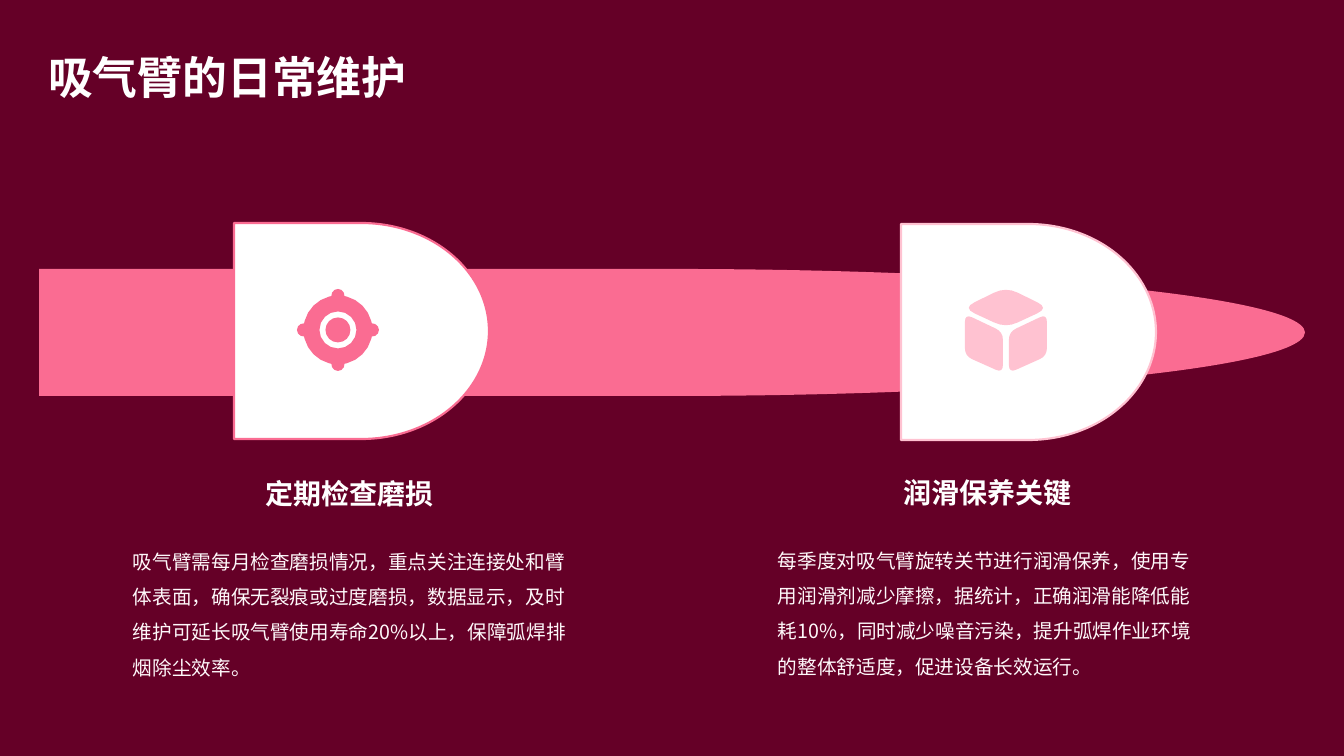
import math
from dataclasses import dataclass

from lxml import etree
from pptx import Presentation
from pptx import util as u
from pptx.dml.color import RGBColor
from pptx.enum import shapes, text
from pptx.oxml.ns import qn

PX = 914400 / 100.8
FONT = "Noto Sans CJK SC"
WINE, PINK, BLUSH = "650027", "FA6C92", "FFC2D1"
WHITE, PALE = "FFFFFF", "FEF8FA"
KNOB_ANGLES = (-45, -30, -15, -11, -9, -5, 0, 5, 9, 11, 15, 30)

Point = tuple[float, float]
Contour = list[Point]
Box = tuple[int, int, int, int]


@dataclass(frozen=True)
class Step:
    badge: Box
    accent: str
    icon: list[Contour]
    heading: str
    heading_box: Box
    body: str
    body_box: Box


def emu(px: float) -> u.Emu:
    return u.Emu(round(px * PX))


def rgb(value: str) -> RGBColor:
    return RGBColor.from_string(value)


def polar(cx: int, cy: int, radius: float, degree: float) -> Point:
    angle = math.radians(degree)
    return cx + radius * math.cos(angle), cy + radius * math.sin(angle)


def circle(cx: int, cy: int, radius: float, turn: int = 1) -> Contour:
    return [polar(cx, cy, radius, turn * i * 22.5) for i in range(16)]


def knobbed_circle(cx: int, cy: int, radius: float, knob: float) -> Contour:
    """Circle outline with four round knobs centred on its rim."""
    points = []
    for quarter in range(0, 360, 90):
        for degree in KNOB_ANGLES:
            off = math.radians(degree)
            inside = knob ** 2 - (radius * math.sin(off)) ** 2
            reach = radius
            if inside > 0:
                reach = max(radius, radius * math.cos(off) + math.sqrt(inside))
            points.append(polar(cx, cy, reach, quarter + degree))
    return points


def rounded(corners: Contour, cut: float) -> Contour:
    """Polygon whose corners are replaced by quadratic curves."""
    points = []
    for i, (x, y) in enumerate(corners):
        ends = []
        for nx, ny in (corners[i - 1], corners[(i + 1) % len(corners)]):
            share = cut / math.hypot(nx - x, ny - y)
            ends.append((x + (nx - x) * share, y + (ny - y) * share))
        (ax, ay), (bx, by) = ends
        for t in (0, 0.25, 0.5, 0.75, 1):
            a, c, b = (1 - t) ** 2, 2 * t * (1 - t), t * t
            points.append((a * ax + c * x + b * bx, a * ay + c * y + b * by))
    return points


def target_icon(cx: int, cy: int) -> list[Contour]:
    return [knobbed_circle(cx, cy, 34.5, 6.5), circle(cx, cy, 18.5, turn=-1),
            circle(cx, cy, 12.5)]


def cube_icon(cx: int, cy: int) -> list[Contour]:
    top = [(cx, cy - 43), (cx + 43, cy - 22), (cx, cy - 2), (cx - 43, cy - 22)]
    sides = [[(cx + s * 41, cy - 16), (cx + s * 3, cy + 2),
              (cx + s * 3, cy + 43), (cx + s * 41, cy + 26)] for s in (-1, 1)]
    return [rounded(top, 13)] + [rounded(side, 8) for side in sides]


def paint(sp, fill: str, line: str | None = None) -> None:
    sp.shadow.inherit = False
    sp.fill.solid()
    sp.fill.fore_color.rgb = rgb(fill)
    if line:
        sp.line.color.rgb = rgb(line)
        sp.line.width = u.Pt(1.54)
    else:
        sp.line.fill.background()


def add_delay(slide, box: Box, fill: str, line: str | None = None) -> None:
    sp = slide.shapes.add_shape(shapes.MSO_SHAPE.FLOWCHART_DELAY, *map(emu, box))
    paint(sp, fill, line)


def add_icon(slide, contours: list[Contour], fill: str) -> None:
    outlines = [[(emu(x), emu(y)) for x, y in contour] for contour in contours]
    builder = slide.shapes.build_freeform(*outlines[0][0])
    for i, outline in enumerate(outlines):
        if i:
            builder.move_to(*outline[0])
        builder.add_line_segments(outline[1:], close=True)
    paint(builder.convert_to_shape(), fill)


def write(sp, words: str, size: int, color: str, bold: bool = False,
          align=text.PP_ALIGN.LEFT, anchor=text.MSO_ANCHOR.MIDDLE,
          spacing: float = 1.0) -> None:
    tf = sp.text_frame
    tf.word_wrap = True
    tf.auto_size = text.MSO_AUTO_SIZE.NONE
    tf.vertical_anchor = anchor
    p = tf.paragraphs[0]
    p.alignment = align
    p.line_spacing = spacing
    p.space_before = u.Pt(0)
    r = p.add_run()
    r.text = words
    r.font.name = FONT
    r.font.size = u.Pt(size)
    r.font.bold = bold
    r.font.color.rgb = rgb(color)
    ea = etree.Element(qn("a:ea"), typeface=FONT)
    r.font._element.find(qn("a:latin")).addnext(ea)


def add_title(slide, words: str, box: Box) -> None:
    sp = slide.shapes.title
    sp.left, sp.top, sp.width, sp.height = map(emu, box)
    write(sp, words, 32, WHITE, bold=True, spacing=1.2)


def add_step_text(slide, step: Step) -> None:
    body = slide.shapes.add_textbox(*map(emu, step.body_box))
    write(body, step.body, 14, PALE, anchor=text.MSO_ANCHOR.TOP, spacing=1.5)
    heading = slide.shapes.add_textbox(*map(emu, step.heading_box))
    write(heading, step.heading, 20, WHITE, bold=True, align=text.PP_ALIGN.CENTER)


STEPS = [
    Step((234, 223, 255, 216), PINK, target_icon(338, 330),
         "定期检查磨损", (200, 471, 299, 45),
         "吸气臂需每月检查磨损情况，重点关注连接处和臂体表面，确保无裂痕或过度磨损，"
         "数据显示，及时维护可延长吸气臂使用寿命20%以上，保障弧焊排烟除尘效率。",
         (123, 533, 453, 191)),
    Step((901, 224, 255, 216), BLUSH, cube_icon(1006, 330),
         "润滑保养关键", (838, 470, 299, 45),
         "每季度对吸气臂旋转关节进行润滑保养，使用专用润滑剂减少摩擦，据统计，"
         "正确润滑能降低能耗10%，同时减少噪音污染，提升弧焊作业环境的整体舒适度，"
         "促进设备长效运行。",
         (768, 532, 439, 191)),
]


def main() -> None:
    prs = Presentation()
    prs.slide_width, prs.slide_height = emu(1344), emu(756)
    slide = prs.slides.add_slide(prs.slide_layouts[5])
    slide.background.fill.solid()
    slide.background.fill.fore_color.rgb = rgb(WINE)
    add_title(slide, "吸气臂的日常维护", (38, 31, 1267, 80))
    add_delay(slide, (39, 269, 1266, 127), PINK)
    for step in STEPS:
        add_delay(slide, step.badge, WHITE, step.accent)
    for step in STEPS:
        add_step_text(slide, step)
    for step in STEPS:
        add_icon(slide, step.icon, step.accent)
    prs.save("out.pptx")


if __name__ == "__main__":
    main()
